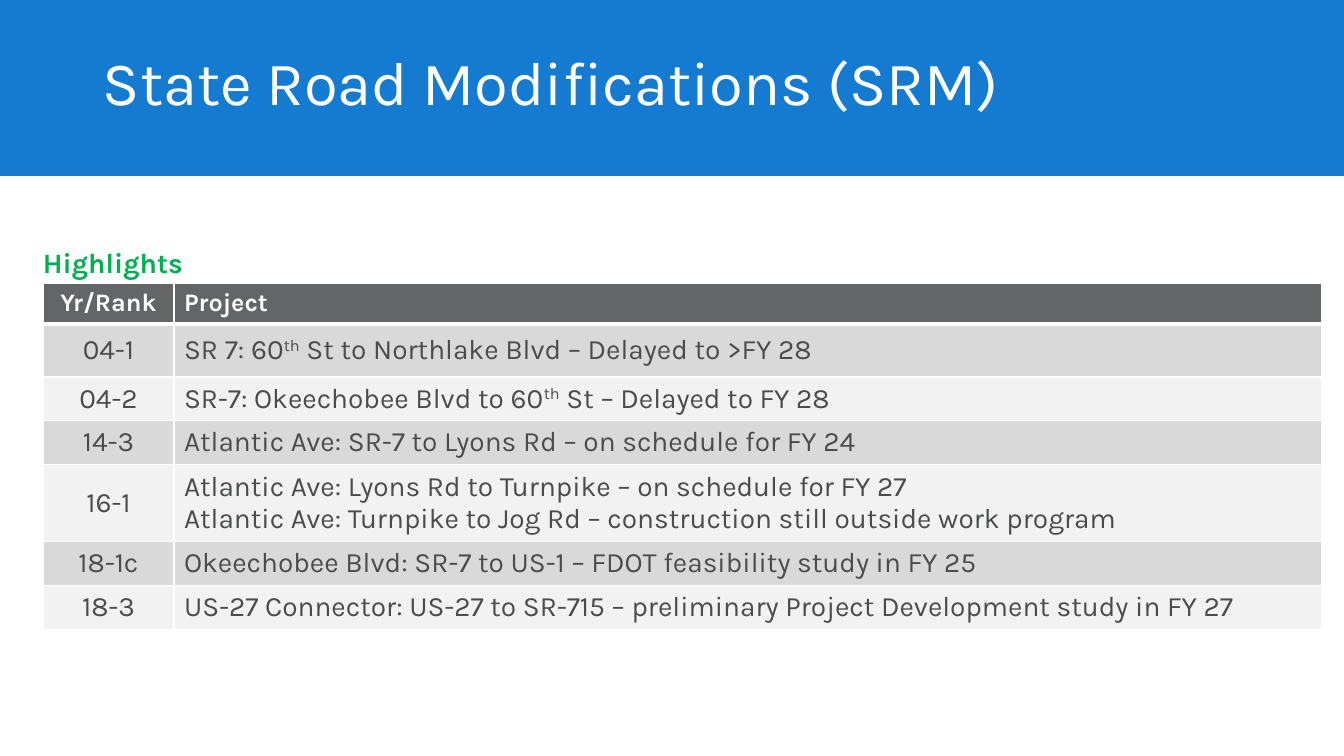
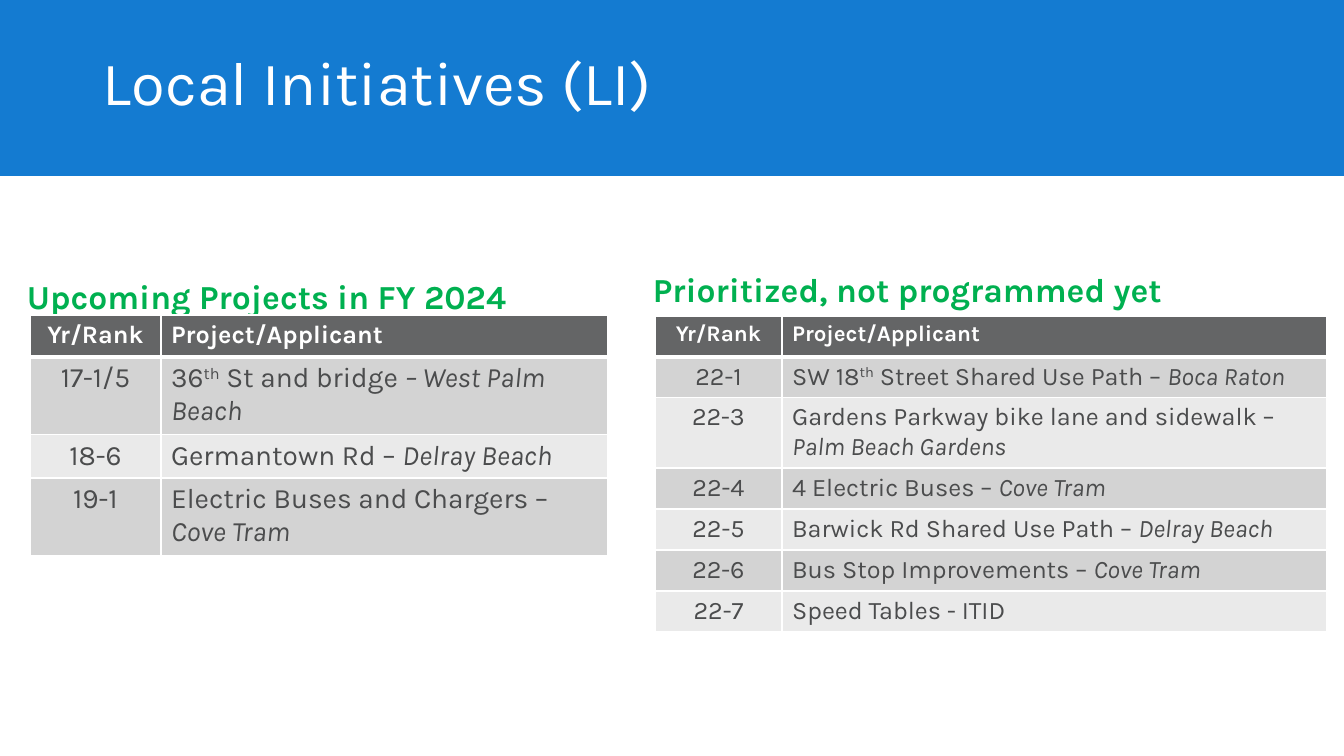
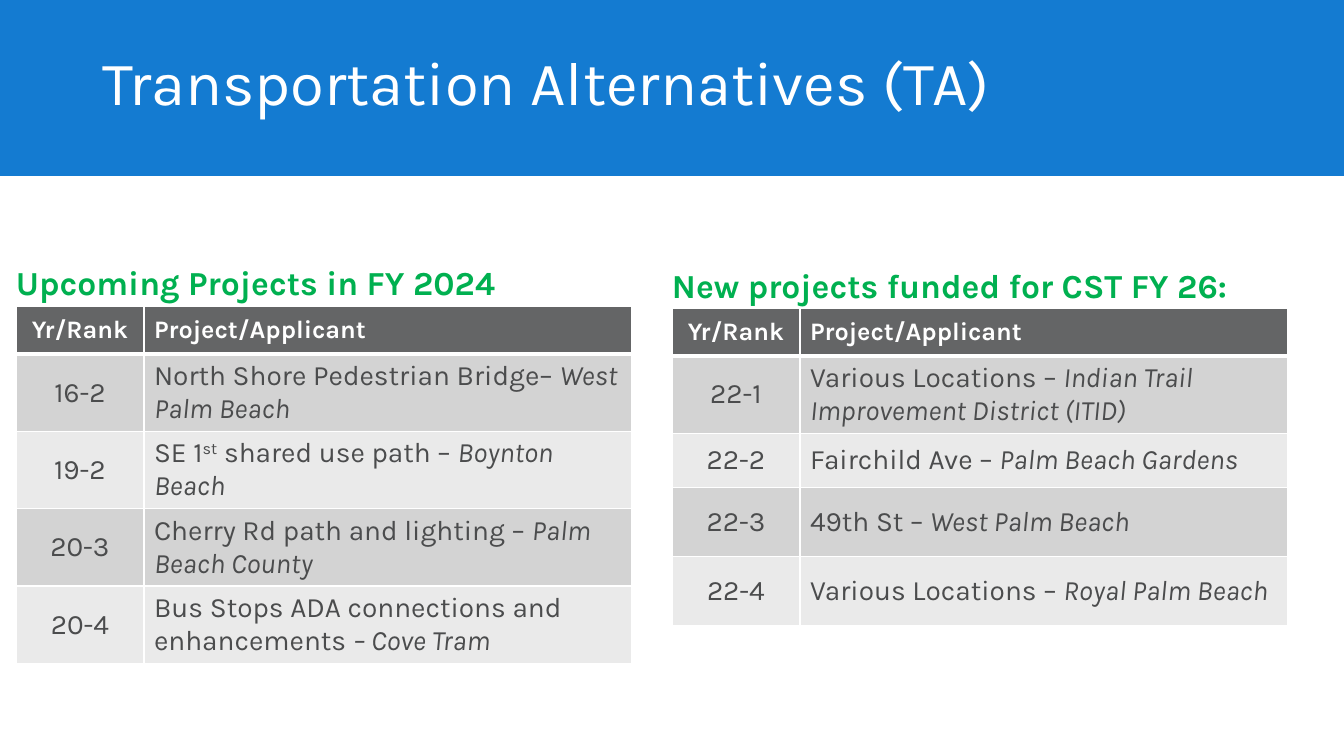
from dataclasses import dataclass

from lxml import etree
from pptx import Presentation
from pptx import util as u
from pptx.dml.color import RGBColor
from pptx.enum import shapes, text
from pptx.oxml import ns

PX = 914400 / 100.8


@dataclass(frozen=True)
class Theme:
    font: str = "Karla"
    band: str = "147BD1"
    white: str = "FFFFFF"
    heading: str = "00B050"
    header: str = "646566"
    body: str = "4B4C4D"
    silver: tuple = ("D9D9D9", "F2F2F2")
    grey: tuple = ("D3D3D3", "EAEAEA")
    title_size: int = 44
    heading_size: int = 24
    body_size: int = 20
    small_size: int = 18
    rule: int = 1
    header_rule: int = 3


theme = Theme()


def px(*lengths):
    return [u.Emu(round(length * PX)) for length in lengths]


def write(frame, lines, size, color, bold=False, align=text.PP_ALIGN.LEFT):
    """Fill a frame; "|" parts runs, "^" marks superscript and "*" italic."""
    frame.word_wrap = True
    for number, line in enumerate(lines.split("\n")):
        para = frame.add_paragraph() if number else frame.paragraphs[0]
        para.alignment = align
        for part in line.split("|"):
            span = para.add_run()
            span.text = part.lstrip("^*")
            span.font.name = theme.font
            span.font.size = u.Pt(size)
            span.font.bold = bold
            span.font.italic = part.startswith("*")
            span.font.color.rgb = RGBColor.from_string(color)
            if part.startswith("^"):
                span.font._element.set("baseline", "30000")


TOP, MIDDLE = text.MSO_ANCHOR.TOP, text.MSO_ANCHOR.MIDDLE

# Each section: heading (text, left, top, size), table (left, top, columns),
# header size, body size, header anchor, body anchor, band colours,
# and rows of (height, rank, project).
pages = [
    ("State Road Modifications (SRM)", [
        (("Highlights", 33, 241, theme.body_size), (43, 283, (131, 1148)),
         theme.small_size, theme.body_size, TOP, MIDDLE, theme.silver, [
            (41, "Yr/Rank", "Project"),
            (53, "04-1", "SR 7: 60|^th| St to Northlake Blvd – Delayed to >FY 28"),
            (43, "04-2", "SR-7: Okeechobee Blvd to 60|^th| St – Delayed to FY 28"),
            (43, "14-3", "Atlantic Ave: SR-7 to Lyons Rd – on schedule for FY 24"),
            (76, "16-1", "Atlantic Ave: Lyons Rd to Turnpike – on schedule for FY 27\n"
                         "Atlantic Ave: Turnpike to Jog Rd – construction still outside work program"),
            (42, "18-1c", "Okeechobee Blvd: SR-7 to US-1 – FDOT feasibility study in FY 25"),
            (43, "18-3", "US-27 Connector: US-27 to SR-715 – preliminary Project Development study in FY 27"),
        ]),
    ]),
    ("Local Initiatives (LI)", [
        (("Upcoming Projects in FY 2024", 17, 271, theme.heading_size), (30, 315, (131, 447)),
         theme.small_size, theme.body_size, TOP, TOP, theme.grey, [
            (42, "Yr/Rank", "Project/Applicant"),
            (76, "17-1/5", "36|^th| St and bridge |*– West Palm Beach"),
            (43, "18-6", "Germantown Rd – |*Delray Beach"),
            (75, "19-1", "Electric Buses and Chargers – |*Cove Tram"),
        ]),
        (("Prioritized, not programmed yet", 643, 264, theme.heading_size), (655, 316, (127, 545)),
         16, theme.small_size, TOP, TOP, theme.grey, [
            (41, "Yr/Rank", "Project/Applicant"),
            (40, "22-1", "SW 18|^th| Street Shared Use Path – |*Boca Raton"),
            (69, "22-3", "Gardens Parkway bike lane and sidewalk – |*Palm Beach Gardens"),
            (41, "22-4", "4 Electric Buses – |*Cove Tram"),
            (41, "22-5", "Barwick Rd Shared Use Path – |*Delray Beach"),
            (41, "22-6", "Bus Stop Improvements – |*Cove Tram"),
            (41, "22-7", "Speed Tables - ITID"),
        ]),
    ]),
    ("Transportation Alternatives (TA)", [
        (("Upcoming Projects in FY 2024", 6, 257, theme.heading_size), (16, 306, (128, 488)),
         theme.small_size, theme.body_size, MIDDLE, MIDDLE, theme.grey, [
            (48, "Yr/Rank", "Project/Applicant"),
            (76, "16-2", "North Shore Pedestrian Bridge– |*West Palm Beach"),
            (75, "19-2", "SE 1|^st| shared use path – |*Boynton Beach"),
            (76, "20-3", "Cherry Rd path and lighting – |*Palm Beach County"),
            (75, "20-4", "Bus Stops ADA connections and enhancements |*– Cove Tram"),
        ]),
        (("New projects funded for CST FY 26:", 662, 260, theme.heading_size), (672, 308, (128, 488)),
         theme.small_size, theme.body_size, MIDDLE, MIDDLE, theme.grey, [
            (48, "Yr/Rank", "Project/Applicant"),
            (76, "22-1", "Various Locations – |*Indian Trail Improvement District (ITID)"),
            (54, "22-2", "Fairchild Ave – |*Palm Beach Gardens"),
            (69, "22-3", "49th St – |*West Palm Beach"),
            (69, "22-4", "Various Locations – |*Royal Palm Beach"),
        ]),
    ]),
]

deck = Presentation()
deck.slide_width, deck.slide_height = px(1344, 756)

for title, sections in pages:
    page = deck.slides.add_slide(deck.slide_layouts[6])
    band = page.shapes.add_shape(shapes.MSO_SHAPE.RECTANGLE, *px(0, 0, 1344, 176))
    band.shadow.inherit = False
    band.fill.solid()
    band.fill.fore_color.rgb = RGBColor.from_string(theme.band)
    band.line.fill.background()
    title_box = page.shapes.add_textbox(*px(93, 32, 998, 108))
    title_box.text_frame.vertical_anchor = MIDDLE
    write(title_box.text_frame, title, theme.title_size, theme.white)
    title_box.text_frame.paragraphs[0].line_spacing = 0.9

    for heading, place, header_size, body_size, header_anchor, body_anchor, fills, rows in sections:
        words, left, top, size = heading
        heading_box = page.shapes.add_textbox(*px(left, top, 640, 50))
        write(heading_box.text_frame, words, size, theme.heading, bold=True)

        left, top, widths = place
        total = sum(row[0] for row in rows)
        table = page.shapes.add_table(
            len(rows), len(widths), *px(left, top, sum(widths), total)).table
        for column, width in zip(table.columns, px(*widths)):
            column.width = width
        for r, (height, *cells) in enumerate(rows):
            table.rows[r].height = px(height)[0]
            is_header = r == 0
            for c, words in enumerate(cells):
                cell = table.cell(r, c)
                cell.vertical_anchor = header_anchor if is_header else body_anchor
                write(cell.text_frame, words,
                      header_size if is_header else body_size,
                      theme.white if is_header else theme.body, bold=is_header,
                      align=text.PP_ALIGN.LEFT if c else text.PP_ALIGN.CENTER)
                properties = cell._tc.get_or_add_tcPr()
                for side in ("L", "R", "T", "B"):
                    thick = (r, side) in ((0, "B"), (1, "T"))
                    weight = theme.header_rule if thick else theme.rule
                    border = etree.SubElement(properties, ns.qn("a:ln" + side), w=str(u.Pt(weight)))
                    paint = etree.SubElement(border, ns.qn("a:solidFill"))
                    etree.SubElement(paint, ns.qn("a:srgbClr"), val=theme.white)
                cell.fill.solid()
                color = theme.header if is_header else fills[(r - 1) % 2]
                cell.fill.fore_color.rgb = RGBColor.from_string(color)

deck.save("out.pptx")
